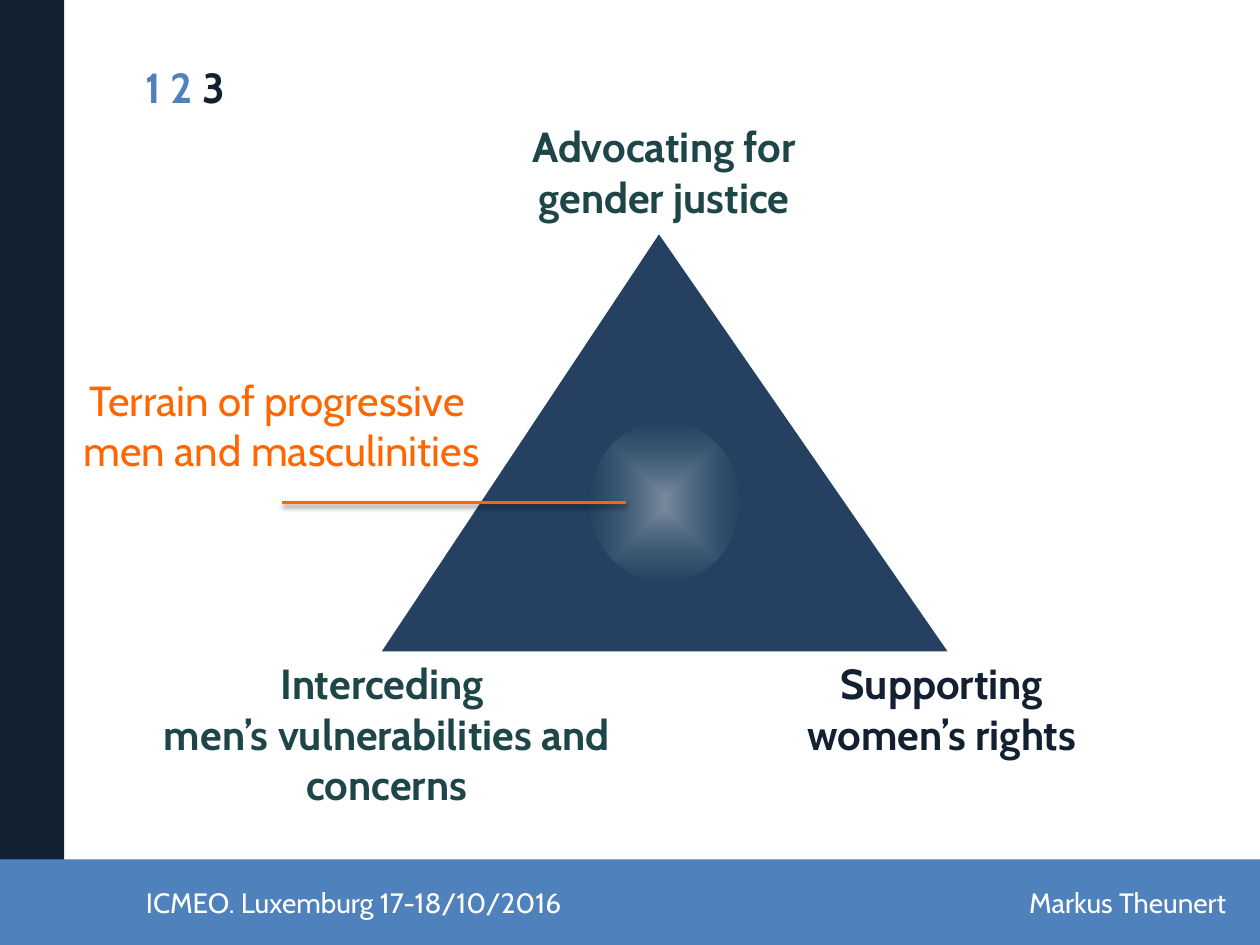
from lxml import etree
from pptx import Presentation
from pptx.dml.color import RGBColor
from pptx.enum.shapes import MSO_CONNECTOR, MSO_SHAPE
from pptx.enum.text import PP_ALIGN
from pptx.oxml import parse_xml
from pptx.oxml.ns import nsdecls, qn
from pptx.util import Inches, Pt

RECTANGLE = MSO_SHAPE.RECTANGLE
TRIANGLE = MSO_SHAPE.ISOSCELES_TRIANGLE
OVAL = MSO_SHAPE.OVAL
STRAIGHT = MSO_CONNECTOR.STRAIGHT
LEFT = PP_ALIGN.LEFT
CENTER = PP_ALIGN.CENTER

FONT = "Cabin"
NAVY = "122031"
BLUE = "4F81BD"
DEEP_BLUE = "254061"
TEAL = "1E4649"
ORANGE = "FF6600"
WHITE = "FFFFFF"


def color(hex_value):
    return RGBColor.from_string(hex_value)


def add_filled_shape(slide, kind, left, top, width, height, fill=None):
    shape = slide.shapes.add_shape(
        kind, Inches(left), Inches(top), Inches(width), Inches(height))
    shape.shadow.inherit = False
    shape.line.fill.background()
    if fill:
        shape.fill.solid()
        shape.fill.fore_color.rgb = color(fill)
    return shape


def add_glow(slide, left, top, width, height):
    """Add an ellipse with a translucent gradient that fades from its centre."""
    glow = add_filled_shape(slide, OVAL, left, top, width, height)
    stops = "".join(
        f'<a:gs pos="{position}"><a:srgbClr val="{value}">'
        f'<a:alpha val="{alpha}"/></a:srgbClr></a:gs>'
        for position, value, alpha in ((0, WHITE, 39000), (100000, "215968", 18000)))
    gradient = parse_xml(
        f'<a:gradFill {nsdecls("a")} rotWithShape="1"><a:gsLst>{stops}</a:gsLst>'
        '<a:path path="shape"><a:fillToRect l="50000" t="50000" r="50000" b="50000"/>'
        '</a:path></a:gradFill>')
    glow._element.spPr.find(qn("a:prstGeom")).addnext(gradient)


def add_text(slide, left, top, width, height, lines, size=24, bold=False, align=LEFT):
    """Add one paragraph; each line is a list of (text, colour) runs."""
    box = slide.shapes.add_textbox(
        Inches(left), Inches(top), Inches(width), Inches(height))
    box.text_frame.word_wrap = True
    paragraph = box.text_frame.paragraphs[0]
    paragraph.alignment = align
    for index, runs in enumerate(lines):
        if index:
            paragraph.add_line_break()
        for text, text_color in runs:
            run = paragraph.add_run()
            run.text = text
            run.font.name = FONT
            run.font.size = Pt(size)
            run.font.bold = bold
            run.font.color.rgb = color(text_color)


def add_pointer(slide, start_x, end_x, y):
    """Add a horizontal line with a soft shadow below it."""
    pointer = slide.shapes.add_connector(
        STRAIGHT, Inches(start_x), Inches(y), Inches(end_x), Inches(y))
    pointer.line.color.rgb = color(ORANGE)
    pointer.line.width = Pt(2)
    effects = etree.SubElement(pointer._element.spPr, qn("a:effectLst"))
    shadow = etree.SubElement(
        effects, qn("a:outerShdw"), blurRad=str(Pt(3.1)), dist=str(Pt(1.6)),
        dir="5400000", rotWithShape="0")
    shadow_color = etree.SubElement(shadow, qn("a:srgbClr"), val="000000")
    etree.SubElement(shadow_color, qn("a:alpha"), val="38000")


def add_frame(slide):
    add_filled_shape(slide, RECTANGLE, -0.2, -0.19, 0.71, 8.66, NAVY)
    add_filled_shape(slide, RECTANGLE, -0.12, 6.82, 10.36, 0.94, BLUE)
    for left, width, text in ((1.06, 4.08, "ICMEO. Luxemburg 17-18/10/2016"),
                              (8.07, 3.39, "Markus Theunert")):
        add_text(slide, left, 6.98, width, 0.37, [[(text, WHITE)]], size=16)


def add_triangle_diagram(slide):
    triangle = add_filled_shape(slide, TRIANGLE, 3.03, 1.86, 4.49, 3.31, DEEP_BLUE)
    triangle.adjustments[0] = 0.49
    corners = (
        (6.02, 5.17, 2.91, 0.91, NAVY, ["Supporting women’s rights"]),
        (3.65, 0.91, 3.24, 0.91, TEAL, ["Advocating for gender justice"]),
        (1.14, 5.17, 3.86, 1.31, TEAL,
         ["Interceding ", "men’s vulnerabilities and concerns"]),
    )
    for left, top, width, height, text_color, lines in corners:
        add_text(slide, left, top, width, height,
                 [[(line, text_color)] for line in lines], bold=True, align=CENTER)
    add_glow(slide, 4.68, 3.35, 1.19, 1.27)
    add_text(slide, 0.49, 2.92, 3.49, 0.91,
             [[("Terrain of progressive ", ORANGE)], [("men and masculinities", ORANGE)]],
             align=CENTER)
    add_pointer(slide, 2.24, 4.97, 3.99)


def main():
    presentation = Presentation()
    presentation.slide_width = Inches(10)
    presentation.slide_height = Inches(7.5)
    slide = presentation.slides.add_slide(presentation.slide_layouts[6])
    add_frame(slide)
    add_triangle_diagram(slide)
    add_text(slide, 1.06, 0.44, 8.82, 0.51, [[("1 2 ", BLUE), ("3", NAVY)]], bold=True)
    presentation.save("out.pptx")


if __name__ == "__main__":
    main()
